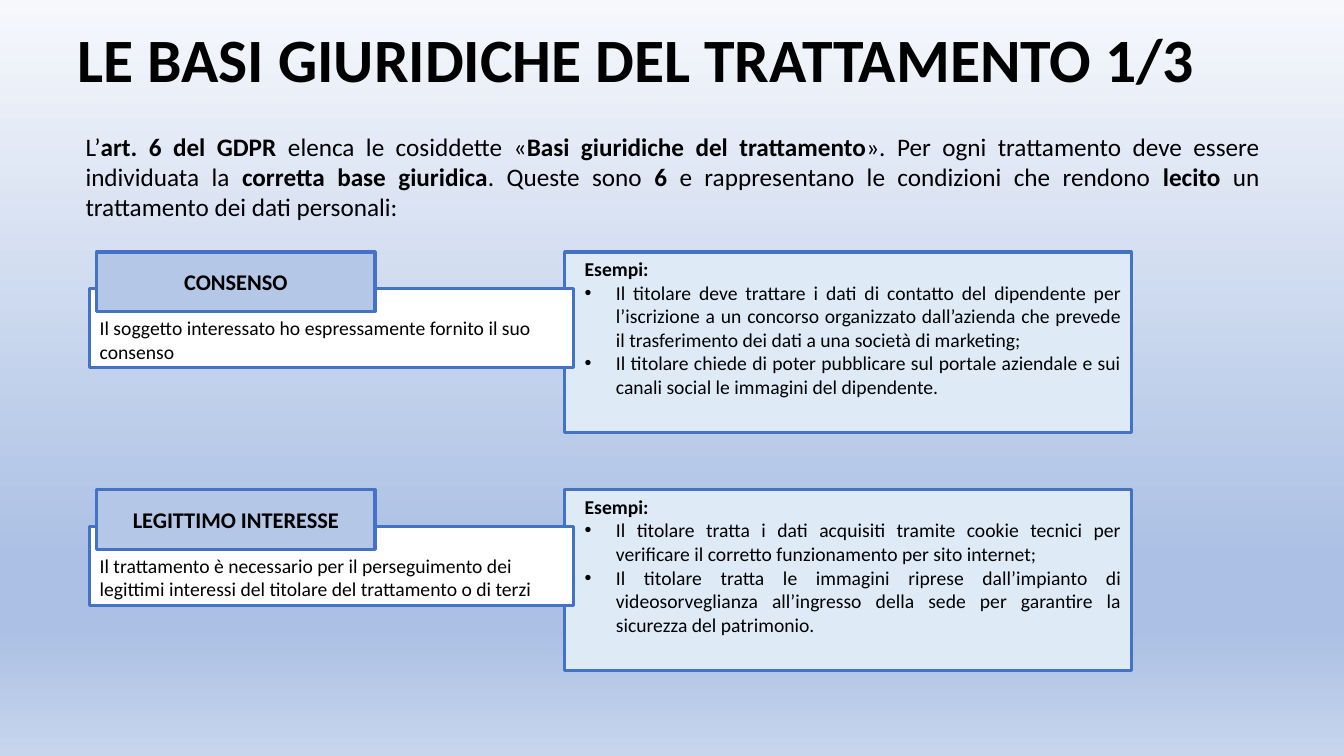
import pptx
import pptx.util
import pptx.dml.color
import pptx.enum.shapes
import pptx.enum.text
import pptx.oxml.ns
import lxml.etree

Inches, Pt = pptx.util.Inches, pptx.util.Pt
ALIGN, ANCHOR = pptx.enum.text.PP_ALIGN, pptx.enum.text.MSO_ANCHOR
qn = pptx.oxml.ns.qn


def color(code):
    return pptx.dml.color.RGBColor.from_string(code)


class Deck:
    font, ink, edge = "Calibri", "000000", "4472C4"

    def __init__(self):
        self.prs = pptx.Presentation()
        self.prs.slide_width = Inches(13.33)
        self.prs.slide_height = Inches(7.5)
        self.slide = self.prs.slides.add_slide(self.prs.slide_layouts[5])

    def back(self, stops):
        self.slide.background.fill.gradient()
        root = self.slide.element
        group = root.find(".//" + qn("a:gsLst"))
        for old in list(group):
            group.remove(old)
        for place, code in stops:
            stop = lxml.etree.SubElement(group, qn("a:gs"), pos=str(place * 1000))
            lxml.etree.SubElement(stop, qn("a:srgbClr"), val=code)
        root.find(".//" + qn("a:lin")).set("ang", "5400000")

    def add_runs(self, para, runs, size, align=ALIGN.LEFT):
        """Each run is a pair of text and bold flag."""
        para.alignment = align
        for text, bold in runs:
            run = para.add_run()
            run.text = text
            run.font.name = self.font
            run.font.size = Pt(size)
            run.font.bold = bold
            run.font.color.rgb = color(self.ink)

    def indent(self, para, left, first=0, mark=None):
        props = para._p.get_or_add_pPr()
        props.set("marL", str(Inches(left)))
        props.set("indent", str(Inches(first)))
        if mark:
            lxml.etree.SubElement(props, qn("a:buFont"), typeface="Arial")
            lxml.etree.SubElement(props, qn("a:buChar"), char=mark)

    def title(self, text, x, y, w, h):
        shape = self.slide.shapes.title
        shape.left, shape.top = Inches(x), Inches(y)
        shape.width, shape.height = Inches(w), Inches(h)
        frame = shape.text_frame
        frame.auto_size = pptx.enum.text.MSO_AUTO_SIZE.NONE
        frame.vertical_anchor = ANCHOR.MIDDLE
        para = frame.paragraphs[0]
        para.line_spacing = 0.9
        self.add_runs(para, [(text, True)], 44)

    def text(self, runs, x, y, w, h):
        box = self.slide.shapes.add_textbox(Inches(x), Inches(y), Inches(w), Inches(h))
        box.text_frame.word_wrap = True
        box.text_frame.auto_size = pptx.enum.text.MSO_AUTO_SIZE.SHAPE_TO_FIT_TEXT
        self.add_runs(box.text_frame.paragraphs[0], runs, 18, ALIGN.JUSTIFY)

    def box(self, x, y, w, h, fill, anchor):
        kind = pptx.enum.shapes.MSO_SHAPE.RECTANGLE
        shape = self.slide.shapes.add_shape(kind, Inches(x), Inches(y), Inches(w), Inches(h))
        shape.shadow.inherit = False
        shape.fill.solid()
        shape.fill.fore_color.rgb = color(fill)
        shape.line.color.rgb = color(self.edge)
        shape.line.width = Pt(2.25)
        shape.text_frame.word_wrap = True
        shape.text_frame.vertical_anchor = anchor
        return shape.text_frame

    def basis(self, top, name, note, cases):
        # Examples panel
        frame = self.box(5.6, top, 5.62, 1.79, "DEEBF7", ANCHOR.TOP)
        head = frame.paragraphs[0]
        self.add_runs(head, [("Esempi:", True)], 14)
        self.indent(head, 0.1)
        for case in cases:
            para = frame.add_paragraph()
            self.add_runs(para, [(case, False)], 14, ALIGN.JUSTIFY)
            self.indent(para, 0.41, -0.31, "•")
        # Description, then the label over it
        frame = self.box(0.89, top + 0.36, 4.8, 0.79, "FFFFFF", ANCHOR.BOTTOM)
        self.add_runs(frame.paragraphs[0], [(note, False)], 14)
        frame = self.box(0.96, top, 2.76, 0.59, "B4C7E7", ANCHOR.MIDDLE)
        self.add_runs(frame.paragraphs[0], [(name, True)], 16, ALIGN.CENTER)


def main():
    deck = Deck()
    deck.back([(0, "F6F8FC"), (74, "ABC0E4"), (83, "ABC0E4"), (100, "C7D5ED")])

    # Heading and intro
    deck.title("LE BASI GIURIDICHE DEL TRATTAMENTO 1/3", 0.67, 0, 11.84, 1.25)
    deck.text([
        ("L’", False),
        ("art. 6 del GDPR", True),
        (" elenca le cosiddette «", False),
        ("Basi giuridiche del trattamento", True),
        ("». Per ogni trattamento deve essere individuata la ", False),
        ("corretta base giuridica", True),
        (". Queste sono ", False),
        ("6", True),
        (" e rappresentano le condizioni che rendono ", False),
        ("lecito", True),
        (" un trattamento dei dati personali:", False),
    ], 0.75, 1.25, 11.84, 1.01)

    # Legal bases, lower one first
    deck.basis(
        4.86, "LEGITTIMO INTERESSE",
        "Il trattamento è necessario per il perseguimento dei legittimi interessi "
        "del titolare del trattamento o di terzi",
        ["Il titolare tratta i dati acquisiti tramite cookie tecnici per verificare "
         "il corretto funzionamento per sito internet;",
         "Il titolare tratta le immagini riprese dall’impianto di videosorveglianza "
         "all’ingresso della sede per garantire la sicurezza del patrimonio."])
    deck.basis(
        2.5, "CONSENSO",
        "Il soggetto interessato ho espressamente fornito il suo consenso",
        ["Il titolare deve trattare i dati di contatto del dipendente per l’iscrizione "
         "a un concorso organizzato dall’azienda che prevede il trasferimento dei dati "
         "a una società di marketing;",
         "Il titolare chiede di poter pubblicare sul portale aziendale e sui canali "
         "social le immagini del dipendente."])

    deck.prs.save("out.pptx")


if __name__ == "__main__":
    main()
